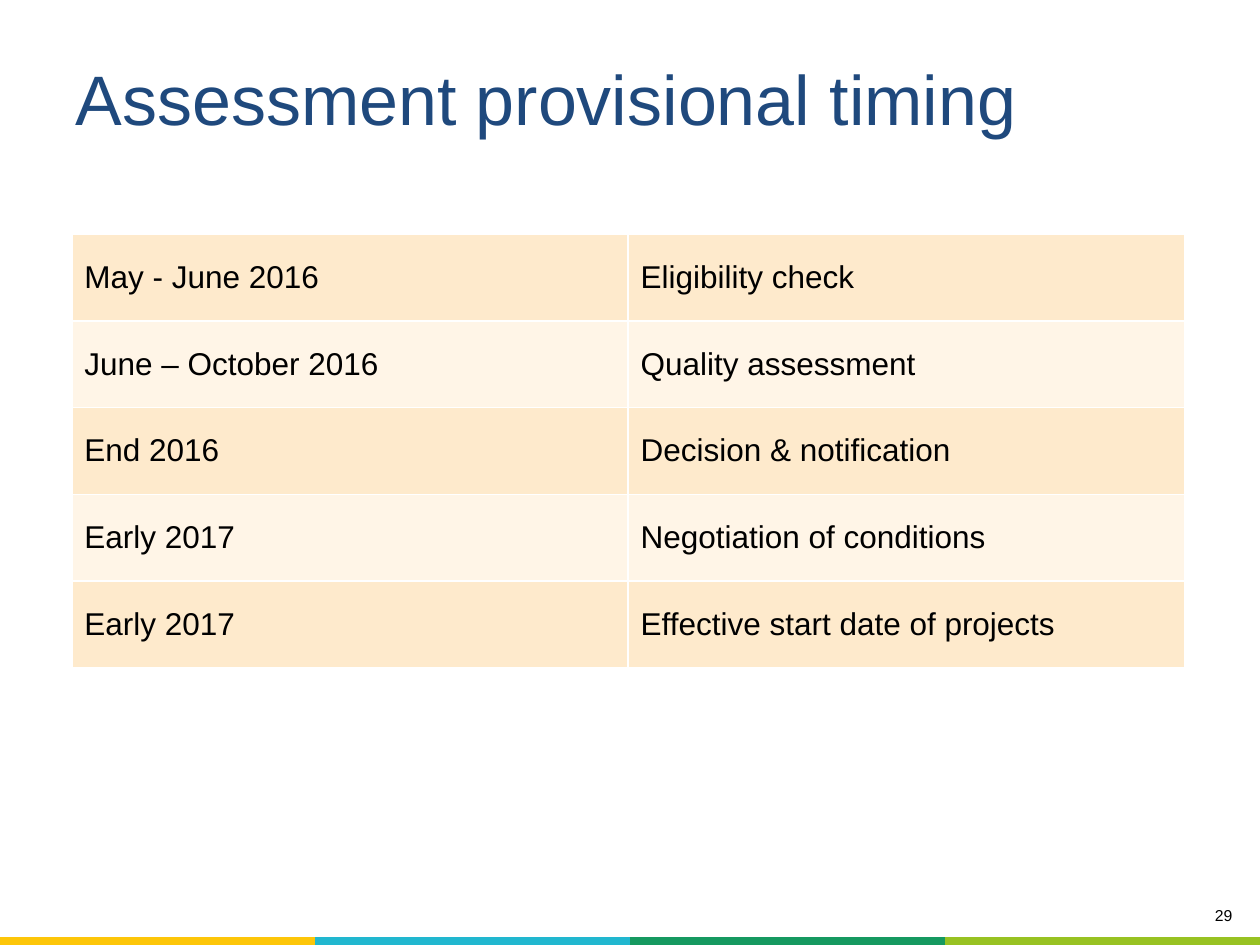
import pptx
import pptx.dml.color
import pptx.enum.text
import pptx.oxml
import pptx.oxml.ns
import pptx.util

RGBColor = pptx.dml.color.RGBColor
Inches = pptx.util.Inches
ALIGN = pptx.enum.text.PP_ALIGN
ANCHOR = pptx.enum.text.MSO_ANCHOR

WIDTH, HEIGHT = 10, 7.5
FONT = "Arial"
NAVY = RGBColor(0x1F, 0x49, 0x7D)
BLACK = RGBColor(0x00, 0x00, 0x00)
WHITE = RGBColor(0xFF, 0xFF, 0xFF)
ROW_COLORS = (RGBColor(0xFE, 0xEA, 0xCC), RGBColor(0xFF, 0xF5, 0xE7))
STRIP_COLORS = (
    RGBColor(0xFD, 0xC6, 0x09),
    RGBColor(0x21, 0xB7, 0xCF),
    RGBColor(0x15, 0x99, 0x60),
    RGBColor(0x98, 0xC2, 0x22),
)
TIMETABLE = (
    ("May - June 2016", "Eligibility check"),
    ("June – October 2016", "Quality assessment"),
    ("End 2016", "Decision & notification"),
    ("Early 2017", "Negotiation of conditions"),
    ("Early 2017", "Effective start date of projects"),
)


def write_text(frame, text, size=18, color=BLACK, align=ALIGN.LEFT, anchor=ANCHOR.MIDDLE):
    """Write one formatted paragraph into a text frame."""
    frame.word_wrap = True
    frame.vertical_anchor = anchor
    paragraph = frame.paragraphs[0]
    paragraph.alignment = align
    run = paragraph.add_run()
    run.text = text
    run.font.name = FONT
    run.font.size = pptx.util.Pt(size)
    run.font.color.rgb = color


def set_borders(cell, color=None):
    """Give a cell one-point borders, or none without a colour."""
    properties = cell._tc.get_or_add_tcPr()
    fill = f'<a:solidFill><a:srgbClr val="{color}"/></a:solidFill>' if color else "<a:noFill/>"
    for side in ("lnL", "lnR", "lnT", "lnB"):
        properties.append(pptx.oxml.parse_xml(
            f'<a:{side} {pptx.oxml.ns.nsdecls("a")} w="12700">{fill}</a:{side}>'))


def add_plain_table(slide, box, rows, columns):
    """Add a table of equal cells without header or banding."""
    table = slide.shapes.add_table(rows, columns, *map(Inches, box)).table
    table.first_row = False
    table.horz_banding = False
    return table


def add_title(slide, box, text):
    """Place and format the title placeholder."""
    title = slide.shapes.title
    title.left, title.top, title.width, title.height = map(Inches, box)
    write_text(title.text_frame, text, size=40, color=NAVY)


def add_timetable(slide, box, entries):
    """Add the table of periods and assessment steps."""
    table = add_plain_table(slide, box, len(entries), len(entries[0]))
    for row, entry in enumerate(entries):
        for column, text in enumerate(entry):
            cell = table.cell(row, column)
            set_borders(cell, WHITE)
            cell.fill.solid()
            cell.fill.fore_color.rgb = ROW_COLORS[row % 2]
            cell.vertical_anchor = ANCHOR.MIDDLE
            write_text(cell.text_frame, text)


def add_color_strip(slide, box, colors):
    """Add the strip of equal colour bands."""
    table = add_plain_table(slide, box, 1, len(colors))
    for column, color in enumerate(colors):
        cell = table.cell(0, column)
        cell.margin_left = cell.margin_right = cell.margin_top = cell.margin_bottom = 0
        set_borders(cell)
        cell.fill.solid()
        cell.fill.fore_color.rgb = color
        write_text(cell.text_frame, "", size=1)


def add_page_number(slide, box, number):
    """Add the right-aligned page number."""
    shape = slide.shapes.add_textbox(*map(Inches, box))
    write_text(shape.text_frame, number, size=9, align=ALIGN.RIGHT, anchor=ANCHOR.TOP)


def main():
    """Build and save the slide."""
    presentation = pptx.Presentation()
    presentation.slide_width, presentation.slide_height = Inches(WIDTH), Inches(HEIGHT)
    slide = presentation.slides.add_slide(presentation.slide_layouts[5])
    strip_height = 0.06
    add_color_strip(slide, (0, HEIGHT - strip_height, WIDTH, strip_height), STRIP_COLORS)
    add_page_number(slide, (7.91, 7.14, 1.97, 0.31), "29")
    add_title(slide, (0.05 * WIDTH, 0.47, 0.9 * WIDTH, 0.61), "Assessment provisional timing")
    add_timetable(slide, (0.57, 1.86, 8.83, 3.44), TIMETABLE)
    presentation.save("out.pptx")


if __name__ == "__main__":
    main()
